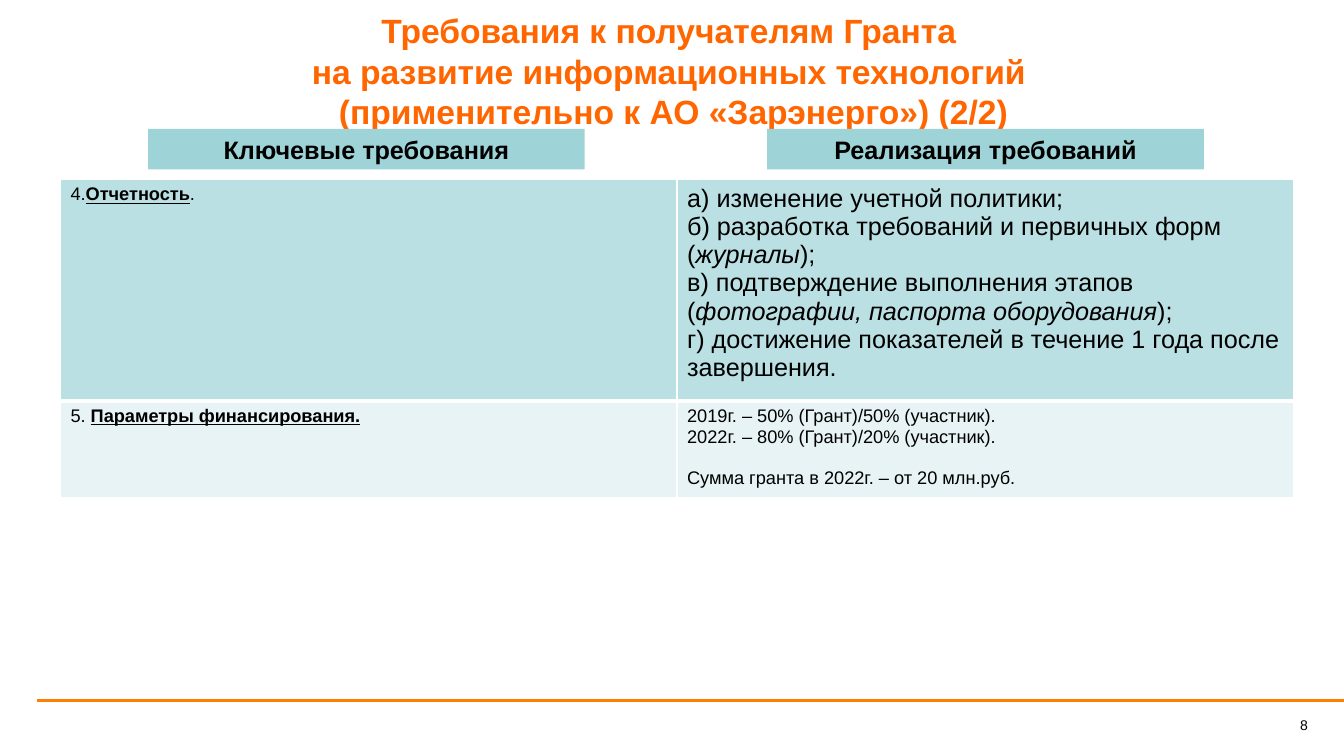
from dataclasses import dataclass

from lxml.etree import SubElement
from pptx import Presentation
from pptx.dml.color import RGBColor as RGB
from pptx.enum.shapes import MSO_CONNECTOR as CONNECTOR, MSO_SHAPE as SHAPE
from pptx.enum.text import MSO_ANCHOR as ANCHOR, MSO_AUTO_SIZE as AUTO, PP_ALIGN as ALIGN
from pptx.oxml.ns import qn
from pptx.util import Inches, Pt


@dataclass(frozen=True)
class Theme:
    font: str = "Arial"
    black: RGB = RGB.from_string("000000")
    title: RGB = RGB.from_string("FF6600")
    rule: RGB = RGB.from_string("FF8001")
    header: RGB = RGB.from_string("9ED3D7")
    rows: tuple = (RGB.from_string("BBE0E3"), RGB.from_string("E7F3F4"))
    border: str = "FFFFFF"
    title_size: int = 24
    large: int = 18
    small: int = 13
    number: int = 10


T = Theme()
B = {"bold": True}
BU = {"bold": True, "underline": True}
I = {"italic": True}

TITLE = ["Требования к получателям Гранта ",
         "на развитие информационных технологий ",
         "(применительно к АО «Зарэнерго») (2/2)"]
HEADERS = [("Ключевые требования", 1.47), ("Реализация требований", 7.61)]

# Each cell: type size and paragraphs; each paragraph: (text, format) runs
ROWS = [
    [(T.small, [[("4.", {}), ("Отчетность", BU), (".", {})]]),
     (T.large, [
         [("а) изменение учетной политики;", {})],
         [("б) разработка требований и первичных форм (", {}), ("журналы", I), (");", {})],
         [("в) подтверждение выполнения этапов (", {}),
          ("фотографии, паспорта оборудования", I), (");", {})],
         [("г) достижение показателей в течение 1 года после завершения.", {})]])],
    [(T.small, [[("5. ", {}), ("Параметры финансирования.", BU)]]),
     (T.small, [
         [("2019г. – 50% (Грант)/50% (участник).", {})],
         [("2022г. – 80% (Грант)/20% (участник).", {})],
         [("Сумма гранта в 2022г. – от 20 млн.руб.", {})]])],
]
ROW_HEIGHTS = [2.2, 0.95]


def add_run(p, text, size, color=T.black, fmt=None):
    r = p.add_run()
    r.text = text
    r.font.color.rgb = color
    values = {"name": T.font, "size": Pt(size), "bold": False, **(fmt or {})}
    for name, value in values.items():
        setattr(r.font, name, value)


def add_title(s):
    sp = s.shapes.title
    sp.left, sp.top, sp.width, sp.height = map(Inches, (0.53, 0.13, 12.3, 1.14))
    tf = sp.text_frame
    tf.auto_size, tf.vertical_anchor = AUTO.NONE, ANCHOR.MIDDLE
    p = tf.paragraphs[0]
    p.alignment = ALIGN.CENTER
    for i, line in enumerate(TITLE):
        if i:
            p.add_line_break()
        add_run(p, line, T.title_size, T.title, B)
    # Line breaks take the title's type size
    for br in p._p.findall(qn("a:br")):
        SubElement(br, qn("a:rPr"), sz=str(T.title_size * 100))


def add_header(s, text, left):
    sp = s.shapes.add_shape(SHAPE.RECTANGLE, Inches(left), Inches(1.28), Inches(4.33), Inches(0.4))
    sp.shadow.inherit = False
    sp.fill.solid()
    sp.fill.fore_color.rgb = T.header
    sp.line.fill.background()
    tf = sp.text_frame
    tf.word_wrap, tf.vertical_anchor = True, ANCHOR.MIDDLE
    p = tf.paragraphs[0]
    p.alignment = ALIGN.CENTER
    add_run(p, text, T.large, fmt=B)


def add_borders(cell, widths):
    tcPr = cell._tc.get_or_add_tcPr()
    for side, width in widths.items():
        ln = SubElement(tcPr, qn(f"a:ln{side}"), w=str(Pt(width)))
        fill = SubElement(ln, qn("a:solidFill"))
        SubElement(fill, qn("a:srgbClr"), val=T.border)


def fill_cell(cell, size, paragraphs):
    tf = cell.text_frame
    for i, runs in enumerate(paragraphs):
        p = tf.paragraphs[0] if i == 0 else tf.add_paragraph()
        for text, fmt in runs:
            add_run(p, text, size, fmt=fmt)
    return tf


def add_requirements(s):
    table = s.shapes.add_table(2, 2, Inches(0.6), Inches(1.78), Inches(12.23),
                               Inches(sum(ROW_HEIGHTS))).table
    table.first_row = table.horz_banding = False
    for r, cells in enumerate(ROWS):
        table.rows[r].height = Inches(ROW_HEIGHTS[r])
        for c, (size, paragraphs) in enumerate(cells):
            cell = table.cell(r, c)
            add_borders(cell, {"L": 1, "R": 1, "T": 3 if r else 1, "B": 1 if r else 3})
            cell.fill.solid()
            cell.fill.fore_color.rgb = T.rows[r]
            tf = fill_cell(cell, size, paragraphs)
    # The grant amount stands one line apart
    tf.paragraphs[-1].space_before = Pt(15)


def add_footer(s):
    line = s.shapes.add_connector(CONNECTOR.STRAIGHT, Inches(0.37), Inches(6.95),
                                  Inches(13.33), Inches(6.95))
    line.line.color.rgb = T.rule
    line.line.width = Pt(2.25)
    SubElement(line._element.spPr, qn("a:effectLst"))
    sp = s.shapes.add_textbox(Inches(12.02), Inches(7.06), Inches(1.05), Inches(0.27))
    tf = sp.text_frame
    tf.word_wrap = True
    p = tf.paragraphs[0]
    p.alignment = ALIGN.RIGHT
    add_run(p, "8", T.number)


def main():
    prs = Presentation()
    prs.slide_width, prs.slide_height = Inches(13.33), Inches(7.5)
    s = prs.slides.add_slide(prs.slide_layouts[5])
    add_footer(s)
    add_title(s)
    for text, left in HEADERS:
        add_header(s, text, left)
    add_requirements(s)
    prs.save("out.pptx")


if __name__ == "__main__":
    main()
